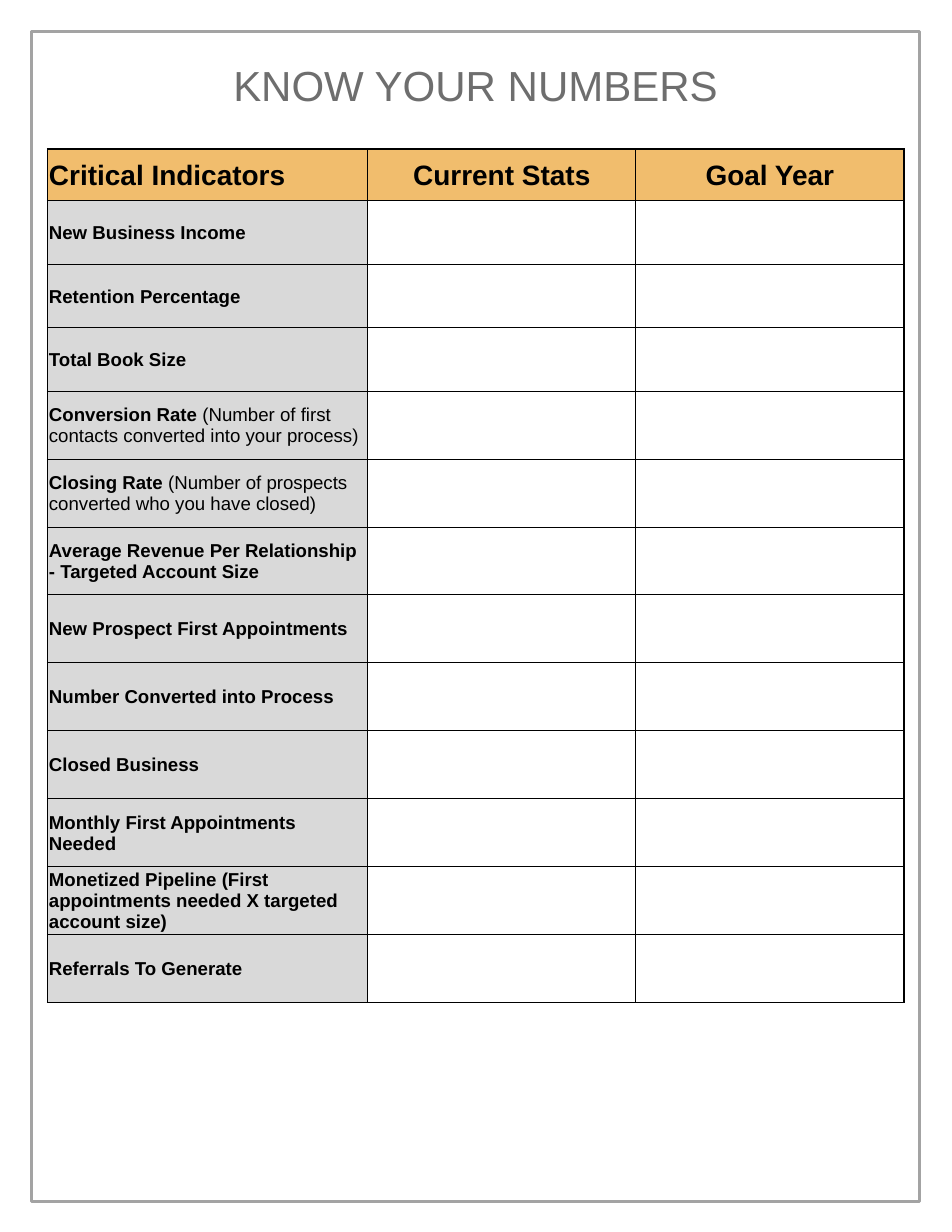
from dataclasses import dataclass

from lxml.etree import SubElement
from pptx import Presentation
from pptx.dml.color import RGBColor
from pptx.enum.shapes import MSO_SHAPE
from pptx.enum.text import MSO_ANCHOR, MSO_AUTO_SIZE, PP_ALIGN
from pptx.oxml.ns import qn
from pptx.util import Cm, Pt


@dataclass(frozen=True)
class Theme:
    font: str = "Arial"
    frame: str = "A3A3A3"
    title: str = "6E6E6E"
    ink: str = "000000"
    header: str = "F1BD6D"
    label: str = "D9D9D9"
    title_size: int = 27
    header_size: int = 18
    label_size: int = 12


theme = Theme()


def set_font(paragraph, size, color, bold=None):
    paragraph.font.name = theme.font
    paragraph.font.size = Pt(size)
    paragraph.font.color.rgb = RGBColor.from_string(color)
    paragraph.font.bold = bold


def set_borders(cell, widths):
    """Draw the left, right, top and bottom borders, which precede the fill."""
    properties = cell._tc.get_or_add_tcPr()
    for index, (side, width) in enumerate(zip(("lnL", "lnR", "lnT", "lnB"), widths)):
        line = SubElement(properties, qn(f"a:{side}"), w=str(Pt(width)))
        properties.insert(index, line)
        fill = SubElement(line, qn("a:solidFill"))
        SubElement(fill, qn("a:srgbClr"), val=theme.ink)


presentation = Presentation()
presentation.slide_width = Cm(21.59)
presentation.slide_height = Cm(27.94)
slide = presentation.slides.add_slide(presentation.slide_layouts[5])

# Page frame, placed behind the title
frame = slide.shapes.add_shape(MSO_SHAPE.RECTANGLE, Cm(0.71), Cm(0.71), Cm(20.14), Cm(26.54))
frame.shadow.inherit = False
frame.fill.background()
frame.line.color.rgb = RGBColor.from_string(theme.frame)
frame.line.width = Pt(2)
slide.shapes._spTree.insert(2, frame._element)

# Title
title = slide.shapes.title
title.left, title.top, title.width, title.height = Cm(1.07), Cm(1.12), Cm(19.43), Cm(2.62)
title_frame = title.text_frame
title_frame.text = "KNOW YOUR NUMBERS"
title_frame.auto_size = MSO_AUTO_SIZE.NONE
title_frame.vertical_anchor = MSO_ANCHOR.TOP
title_frame.margin_top = Cm(0.22)
title_frame.paragraphs[0].alignment = PP_ALIGN.CENTER
set_font(title_frame.paragraphs[0], theme.title_size, theme.title)

# Indicators: bold name and plain explanation
headers = ["Critical Indicators", "Current Stats", "Goal Year"]
indicators = [
    ("New Business Income", ""),
    ("Retention Percentage", ""),
    ("Total Book Size", ""),
    ("Conversion Rate", " (Number of first contacts converted into your process)"),
    ("Closing Rate", " (Number of prospects converted who you have closed)"),
    ("Average Revenue Per Relationship - Targeted Account Size", ""),
    ("New Prospect First Appointments", ""),
    ("Number Converted into Process", ""),
    ("Closed Business", ""),
    ("Monthly First Appointments Needed", ""),
    ("Monetized Pipeline (First appointments needed X targeted account size)", ""),
    ("Referrals To Generate", ""),
]
column_widths = [7.26, 6.08, 6.08]
row_heights = [1.17] + [1.44] * 3 + [1.54] * 9

# Table grid
table = slide.shapes.add_table(
    len(row_heights), len(column_widths), Cm(1.08), Cm(3.38),
    Cm(sum(column_widths)), Cm(sum(row_heights)),
).table
table.horz_banding = False
for column, width in zip(table.columns, column_widths):
    column.width = Cm(width)
for row, height in zip(table.rows, row_heights):
    row.height = Cm(height)

# Cell fills, margins and borders
for row_index, row in enumerate(table.rows):
    for column_index, cell in enumerate(row.cells):
        cell.vertical_anchor = MSO_ANCHOR.MIDDLE
        cell.margin_left = cell.margin_right = cell.margin_top = Cm(0.03)
        cell.margin_bottom = 0
        if row_index and column_index:
            cell.fill.background()
        else:
            cell.fill.solid()
            color = theme.label if row_index else theme.header
            cell.fill.fore_color.rgb = RGBColor.from_string(color)
        set_borders(cell, (
            1 if column_index == 0 else 0.5,
            1 if column_index == 2 else 0.5,
            1 if row_index <= 1 else 0.5,
            1 if row_index == 0 else 0.5,
        ))

# Header text
for column_index, text in enumerate(headers):
    cell = table.cell(0, column_index)
    cell.text = text
    paragraph = cell.text_frame.paragraphs[0]
    paragraph.alignment = PP_ALIGN.CENTER if column_index else PP_ALIGN.LEFT
    set_font(paragraph, theme.header_size, theme.ink, True)

# Indicator text
for row_index, (name, explanation) in enumerate(indicators, start=1):
    paragraph = table.cell(row_index, 0).text_frame.paragraphs[0]
    set_font(paragraph, theme.label_size, theme.ink, None if explanation else True)
    name_run = paragraph.add_run()
    name_run.text = name
    if explanation:
        name_run.font.bold = True
        explanation_run = paragraph.add_run()
        explanation_run.text = explanation
        explanation_run.font.bold = False

presentation.save("out.pptx")
